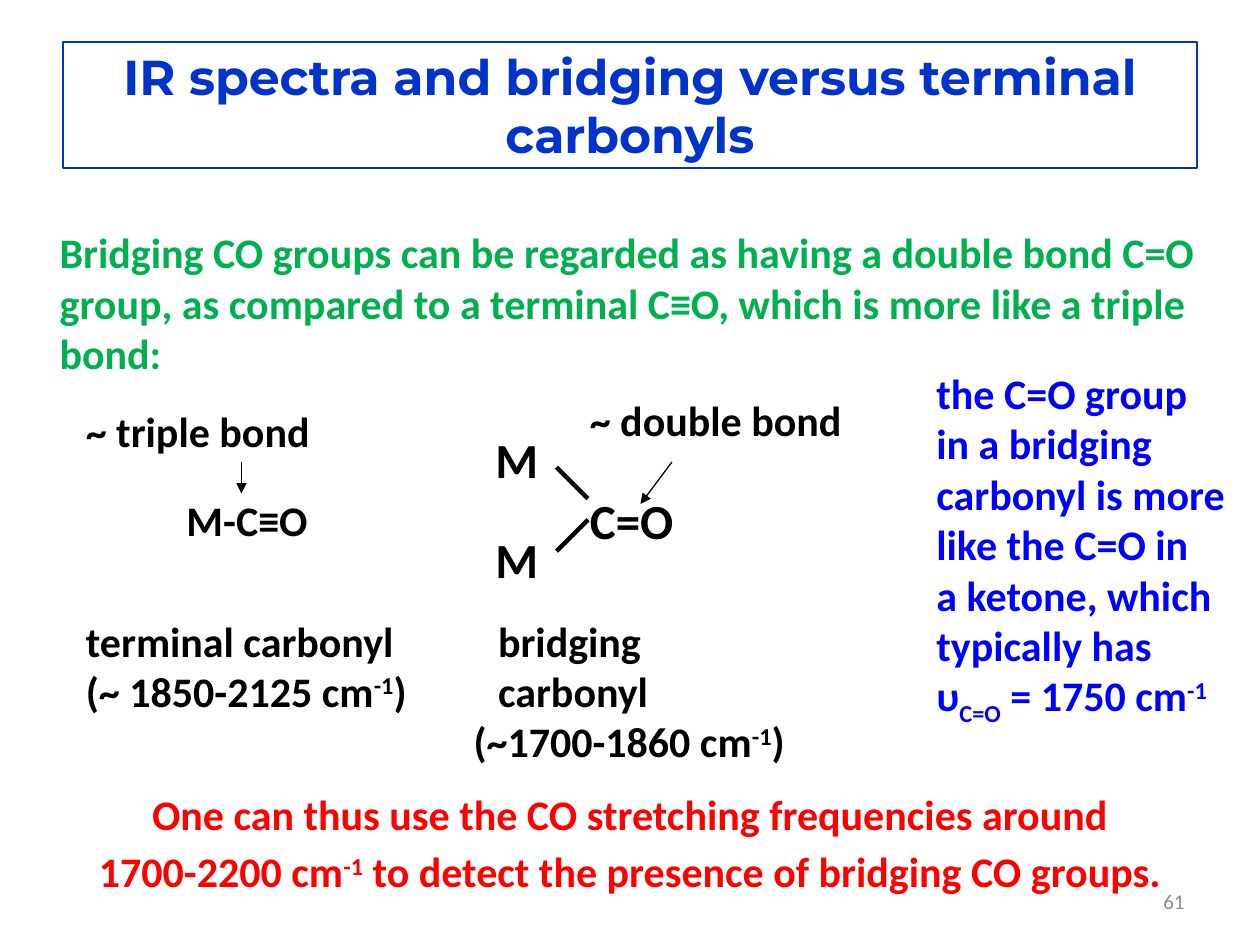
from pptx import Presentation
from pptx.dml import color
from pptx.enum import shapes, text
from pptx.oxml import ns
from pptx.util import Pt
from lxml import etree

BLACK, BLUE, NAVY, GREEN, RED, GREY = (
    "000000", "0000FF", "0033CC", "00B050", "FF0000", "8C8C8C")
SUP, SUB = 30000, -25000
LEFT, CENTER, RIGHT = text.PP_ALIGN.LEFT, text.PP_ALIGN.CENTER, text.PP_ALIGN.RIGHT


def rgb(value):
    return color.RGBColor.from_string(value)


def add_run(p, content, size, fill, bold=True, name="Calibri", baseline=0):
    r = p.add_run()
    r.text = content
    r.font.size = Pt(size)
    r.font.name = name
    r.font.bold = bold
    r.font.color.rgb = rgb(fill)
    if baseline:
        r._r.get_or_add_rPr().set("baseline", str(baseline))


def add_text(s, box, lines, size=24, fill=BLACK, wrap=False, align=LEFT, gap=0, bold=True):
    sp = s.shapes.add_textbox(*map(Pt, box))
    tf = sp.text_frame
    tf.word_wrap = wrap
    for i, line in enumerate(lines):
        p = tf.add_paragraph() if i else tf.paragraphs[0]
        p.alignment = align
        if i and gap:
            p.space_before = Pt(gap)
        for part in [line] if isinstance(line, str) else line:
            content, baseline = (part, 0) if isinstance(part, str) else part
            add_run(p, content, size, fill, bold, baseline=baseline)
    return tf


def add_line(s, start, end, width, arrow=False):
    c = s.shapes.add_connector(
        shapes.MSO_CONNECTOR.STRAIGHT, *map(Pt, (*start, *end)))
    c.line.color.rgb = rgb(BLACK)
    c.line.width = Pt(width)
    if arrow:
        etree.SubElement(c.line._get_or_add_ln(), ns.qn("a:tailEnd"), type="triangle")
    etree.SubElement(c._element.spPr, ns.qn("a:effectLst"))


def add_title(s, box):
    sp = s.shapes.add_shape(shapes.MSO_SHAPE.RECTANGLE, *map(Pt, box))
    sp.shadow.inherit = False
    sp.fill.background()
    sp.line.color.rgb = rgb(NAVY)
    sp.line.width = Pt(0.75)
    tf = sp.text_frame
    tf.word_wrap = True
    tf.vertical_anchor = text.MSO_ANCHOR.MIDDLE
    p = tf.paragraphs[0]
    p.alignment = CENTER
    add_run(p, "IR spectra and bridging versus terminal carbonyls", 28, NAVY, name="Montserrat")


def add_intro(s, box):
    add_text(s, box, [
        "Bridging CO groups can be regarded as having a double bond C=O group, "
        "as compared to a terminal C≡O, which is more like a triple bond:",
    ], fill=GREEN, wrap=True)


def add_terminal(s, x, y):
    add_text(s, (x, y + 6, 144, 36), ["~ triple bond"])
    add_line(s, (x + 96, y + 42), (x + 96, y + 60), 0.75, arrow=True)
    add_text(s, (x + 57.5, y + 57, 100, 36), ["M-C≡O"])
    add_text(s, (x, y + 126, 198, 66), [
        "terminal carbonyl", ["(~ 1850-2125 cm", ("-1", SUP), ")"]])


def add_bridging(s, x, y):
    add_text(s, (x + 66.5, y, 160, 36), ["~ double bond"])
    add_line(s, (x + 120.5, y + 42), (x + 102.5, y + 66), 0.75, arrow=True)
    centre = y + 69
    for side in (-1, 1):
        add_line(s, (x + 54.5, centre + side * 24), (x + 72.5, centre + side * 6), 2.5)
        add_text(s, (x + 12.5, centre - 20.5 + side * 28.5, 40, 41), ["M"], size=28)
    add_text(s, (x + 66.5, y + 54.5, 63, 41), ["C=O"], size=28)
    tf = add_text(s, (x, y + 126, 198, 66), [
        "bridging carbonyl", ["(~1700-1860 cm", ("-1", SUP), ")"]])
    tf.paragraphs[0]._p.get_or_add_pPr().set("marL", str(Pt(14)))


def add_ketone_note(s, box):
    add_text(s, box, [
        "the C=O group", "in a bridging", "carbonyl is more", "like the C=O in",
        "a ketone, which", "typically has",
        ["υ", ("C=O", SUB), " = 1750 cm", ("-1", SUP)],
    ], fill=BLUE)


def add_conclusion(s, box):
    add_text(s, box, [
        "One can thus use the CO stretching frequencies around",
        ["1700-2200 cm", ("-1", SUP), " to detect the presence of bridging CO groups."],
    ], fill=RED, wrap=True, align=CENTER, gap=4)


def add_page_number(s, box):
    tf = add_text(s, box, ["61"], size=12, fill=GREY, wrap=True, align=RIGHT, bold=False)
    tf.vertical_anchor = text.MSO_ANCHOR.MIDDLE


def main():
    prs = Presentation()
    prs.slide_width, prs.slide_height = Pt(720), Pt(540)
    s = prs.slides.add_slide(prs.slide_layouts[6])
    add_title(s, (36, 24, 648, 72))
    add_intro(s, (27, 126, 693, 96))
    add_terminal(s, 42, 222)
    add_bridging(s, 263.5, 222)
    add_ketone_note(s, (528, 206.5, 181, 240))
    add_conclusion(s, (0, 447, 720, 72))
    add_page_number(s, (516, 500.5, 168, 29))
    prs.save("out.pptx")


if __name__ == "__main__":
    main()
